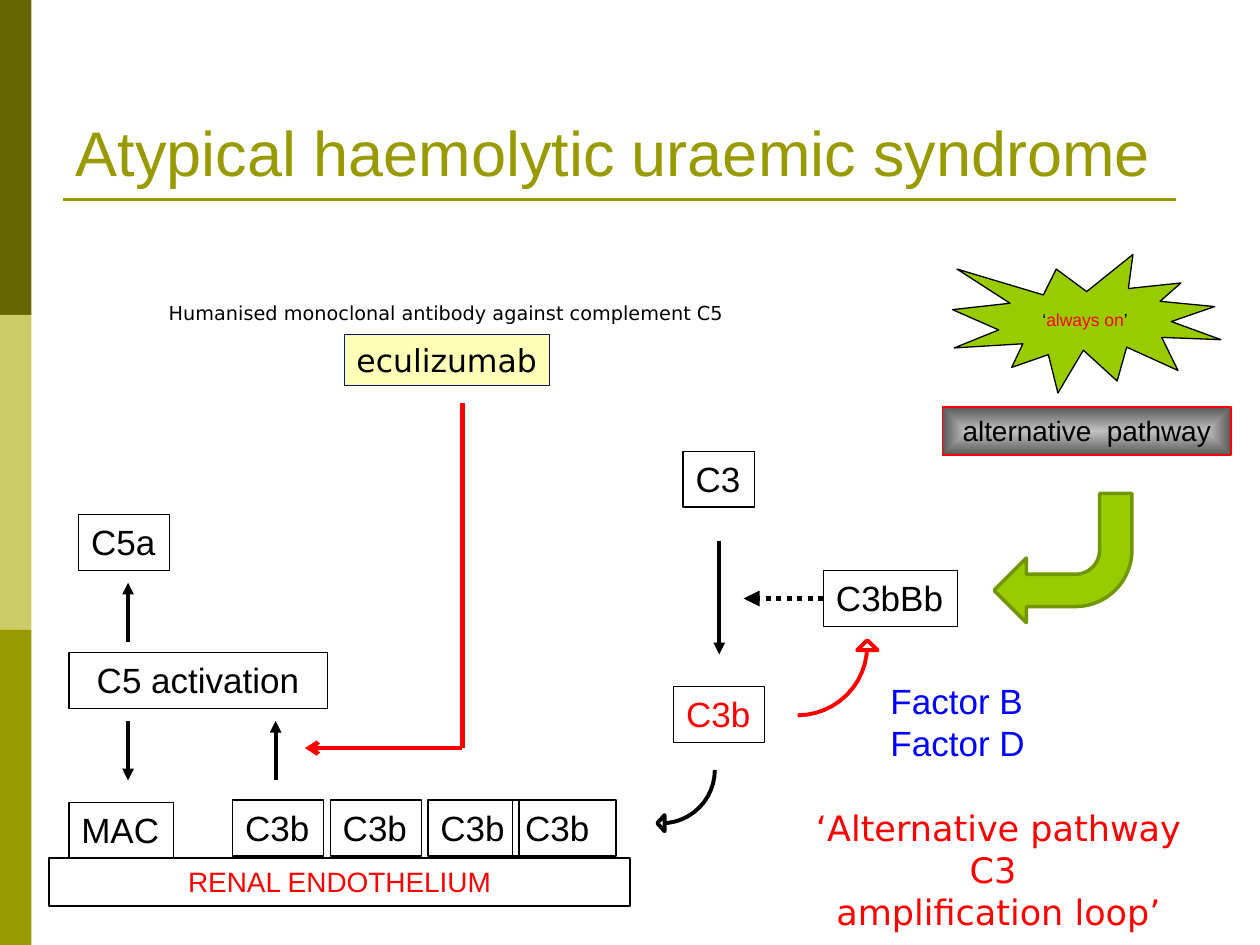
from dataclasses import dataclass
from math import cos, pi, sin

from lxml import etree
from pptx import Presentation
from pptx.dml.color import RGBColor
from pptx.enum import dml, shapes, text
from pptx.oxml import ns
from pptx.util import Pt


@dataclass(frozen=True)
class Theme:
    black: str = "000000"
    white: str = "FFFFFF"
    red: str = "FF0000"
    blue: str = "0000FF"
    navy: str = "002060"
    cream: str = "FFFFB8"
    olive: str = "999900"
    dark_olive: str = "666600"
    pale_olive: str = "CCCC66"
    green: str = "99CC00"
    dark_green: str = "719700"
    silver: str = "C0C0C0"
    grey: str = "595959"
    sans: str = "Arial"
    humanist: str = "DejaVu Sans"
    title: int = 36
    label: int = 20
    drug: int = 18
    banner: int = 16
    note: int = 11
    burst: int = 10


T = Theme()
LEFT, CENTER = text.PP_ALIGN.LEFT, text.PP_ALIGN.CENTER
KIND = shapes.MSO_SHAPE


def rgb(code):
    return RGBColor.from_string(code)


def style(shape, fill=None, line=None, width=0.75):
    """Set fill and outline; None means neither is drawn."""
    shape.shadow.inherit = False
    if fill:
        shape.fill.solid()
        shape.fill.fore_color.rgb = rgb(fill)
    else:
        shape.fill.background()
    if line:
        shape.line.color.rgb = rgb(line)
        shape.line.width = Pt(width)
    else:
        shape.line.fill.background()
    return shape


def write(shape, lines, size=T.label, color=T.black, font=T.sans,
          align=LEFT, wrap=False, anchor=text.MSO_ANCHOR.TOP):
    frame = shape.text_frame
    frame.text = lines
    frame.word_wrap = wrap
    frame.auto_size = text.MSO_AUTO_SIZE.NONE
    frame.vertical_anchor = anchor
    for paragraph in frame.paragraphs:
        paragraph.alignment = align
        paragraph.font.size = Pt(size)
        paragraph.font.name = font
        paragraph.font.color.rgb = rgb(color)


def add_preset(slide, kind, x, y, w, h, fill=None, line=None, width=0.75):
    shape = slide.shapes.add_shape(kind, Pt(x), Pt(y), Pt(w), Pt(h))
    return style(shape, fill, line, width)


def add_box(slide, label, x, y, w, h=32, fill=None, line=T.black, **look):
    box = add_preset(slide, KIND.RECTANGLE, x, y, w, h, fill, line)
    write(box, label, **look)
    return box


def add_note(slide, lines, x, y, w, h, **look):
    write(slide.shapes.add_textbox(Pt(x), Pt(y), Pt(w), Pt(h)), lines, **look)


def add_line(slide, x1, y1, x2, y2, color=T.black, width=2.25, head=None):
    line = slide.shapes.add_connector(
        shapes.MSO_CONNECTOR.STRAIGHT, Pt(x1), Pt(y1), Pt(x2), Pt(y2))
    line.line.color.rgb = rgb(color)
    line.line.width = Pt(width)
    if head:
        etree.SubElement(line.line._get_or_add_ln(), ns.qn("a:tailEnd"), type=head)
    etree.SubElement(line._element.spPr, ns.qn("a:effectLst"))
    return line


def add_outline(slide, points, color, closed, fill=None):
    start, *rest = [(Pt(x), Pt(y)) for x, y in points]
    builder = slide.shapes.build_freeform(*start)
    builder.add_line_segments(rest, close=closed)
    style(builder.convert_to_shape(), fill, color, 2.25)


def add_curved_arrow(slide, cx, cy, radius, head, color):
    """Lower-right quarter circle about (cx, cy) with a hollow head."""
    steps = 12
    angles = [i * pi / 2 / steps for i in range(steps + 1)]
    arc = [(cx + radius * sin(a), cy + radius * cos(a)) for a in angles]
    add_outline(slide, arc, color, closed=False)
    add_outline(slide, head, color, closed=True, fill=T.white)


def shade_from_center(shape, inner, outer):
    shape.fill.gradient()
    for stop, color in zip(shape.fill.gradient_stops, (inner, outer)):
        stop.color.rgb = rgb(color)
    gradient = shape._element.spPr.find(ns.qn("a:gradFill"))
    gradient.remove(gradient.find(ns.qn("a:lin")))
    shading = etree.SubElement(gradient, ns.qn("a:path"), path="shape")
    sides = dict.fromkeys("ltrb", "50000")
    etree.SubElement(shading, ns.qn("a:fillToRect"), **sides)


def add_frame(slide):
    # Side bands, title and rule
    for i, color in enumerate((T.dark_olive, T.pale_olive, T.olive)):
        add_preset(slide, KIND.RECTANGLE, 0, 180 * i, 18, 180, color)
    add_line(slide, 36, 114, 672, 114, T.olive, 1.5)
    title = slide.shapes.title
    title.left, title.top, title.width, title.height = Pt(36), Pt(21.6), Pt(648), Pt(90)
    write(title, "Atypical haemolytic uraemic syndrome", T.title, T.olive,
          wrap=True, anchor=text.MSO_ANCHOR.BOTTOM)


def add_amplification_loop(slide):
    # C3 is cleaved to C3b by C3bBb
    add_box(slide, "C3b", 385, 392.3, 52, color=T.red)
    add_box(slide, "C3", 390.4, 257.8, 41)
    add_line(slide, 411, 309, 411, 374, head="triangle")
    convertase = add_box(slide, "C3bBb", 470.6, 326, 76.5)
    cleavage = add_line(slide, 470.6, 342, 425, 342, width=3, head="triangle")
    cleavage.begin_connect(convertase, 1)
    cleavage.line.dash_style = dml.MSO_LINE.ROUND_DOT

    # Loop arrows
    add_curved_arrow(slide, 455.8, 369, 39.7,
                     [(501.5, 371.5), (495.5, 365.8), (489.8, 371.5)], T.red)
    add_curved_arrow(slide, 378, 440, 30.5,
                     [(379.8, 475), (375.6, 470.4), (379.8, 465.8)], T.black)
    add_note(slide, "Factor B\nFactor D", 501.8, 384.5, 91.5, 55.5, color=T.blue)
    add_note(slide, "‘Alternative pathway C3 \namplification loop’",
             455.8, 457.2, 229.7, 55.5, color=T.red, font=T.humanist,
             align=CENTER, wrap=True)


def add_alternative_pathway(slide):
    pathway = add_box(slide, "alternative  pathway", 538.5, 232.6, 165, 27.4,
                      line=T.red, size=T.banner, align=CENTER, wrap=True)
    shade_from_center(pathway, T.silver, T.grey)
    burst = add_preset(slide, KIND.EXPLOSION1, 544.3, 145.4, 153.4, 79.2,
                       T.green, T.black)
    write(burst, "‘", T.burst, align=CENTER, anchor=text.MSO_ANCHOR.MIDDLE)
    quote = burst.text_frame.paragraphs[0]
    always_on = quote.add_run()
    always_on.text = "always on"
    always_on.font.color.rgb = rgb(T.red)
    quote.add_run().text = "’"
    bend = add_preset(slide, KIND.BENT_ARROW, 568, 282, 78.8, 73.8,
                      T.green, T.dark_green, 2)
    bend.rotation = 180


def add_endothelium(slide):
    # Deposited C3b on the vessel wall
    for i in range(3):
        add_box(slide, "C3b", 133 + 55.8 * i, 457.2, 52)
    add_box(slide, "RENAL ENDOTHELIUM", 28.1, 490.3, 332, 27.4, size=T.banner,
            color=T.red, align=CENTER, wrap=True)
    add_box(slide, "C3b", 293, 457.2, 59, wrap=True)


def add_terminal_pathway(slide):
    add_box(slide, "C5 activation", 39.4, 373, 147.6, align=CENTER, wrap=True)
    add_box(slide, "MAC", 39.4, 458.6, 59.8)
    add_box(slide, "C5a", 45, 294, 52)
    for x, start, end in ((157.5, 446, 412), (73.2, 412, 446), (73.2, 367, 333)):
        add_line(slide, x, start, x, end, head="triangle")


def add_inhibitor(slide):
    add_line(slide, 264.2, 230.5, 264.2, 427.5, T.red, 2.5)
    add_line(slide, 264.2, 427.5, 174.2, 427.5, T.red, 2.5, "arrow")
    add_box(slide, "eculizumab", 196.7, 191.3, 117.2, 29, T.cream, T.navy,
            size=T.drug, font=T.humanist, align=CENTER)
    add_note(slide, "Humanised monoclonal antibody against complement C5",
             89.3, 168.5, 332.6, 34, size=T.note, font=T.humanist)


def main():
    deck = Presentation()
    deck.slide_width, deck.slide_height = Pt(720), Pt(540)
    slide = deck.slides.add_slide(deck.slide_layouts[5])
    for part in (add_frame, add_amplification_loop, add_endothelium,
                 add_alternative_pathway, add_terminal_pathway, add_inhibitor):
        part(slide)
    deck.save("out.pptx")


if __name__ == "__main__":
    main()
